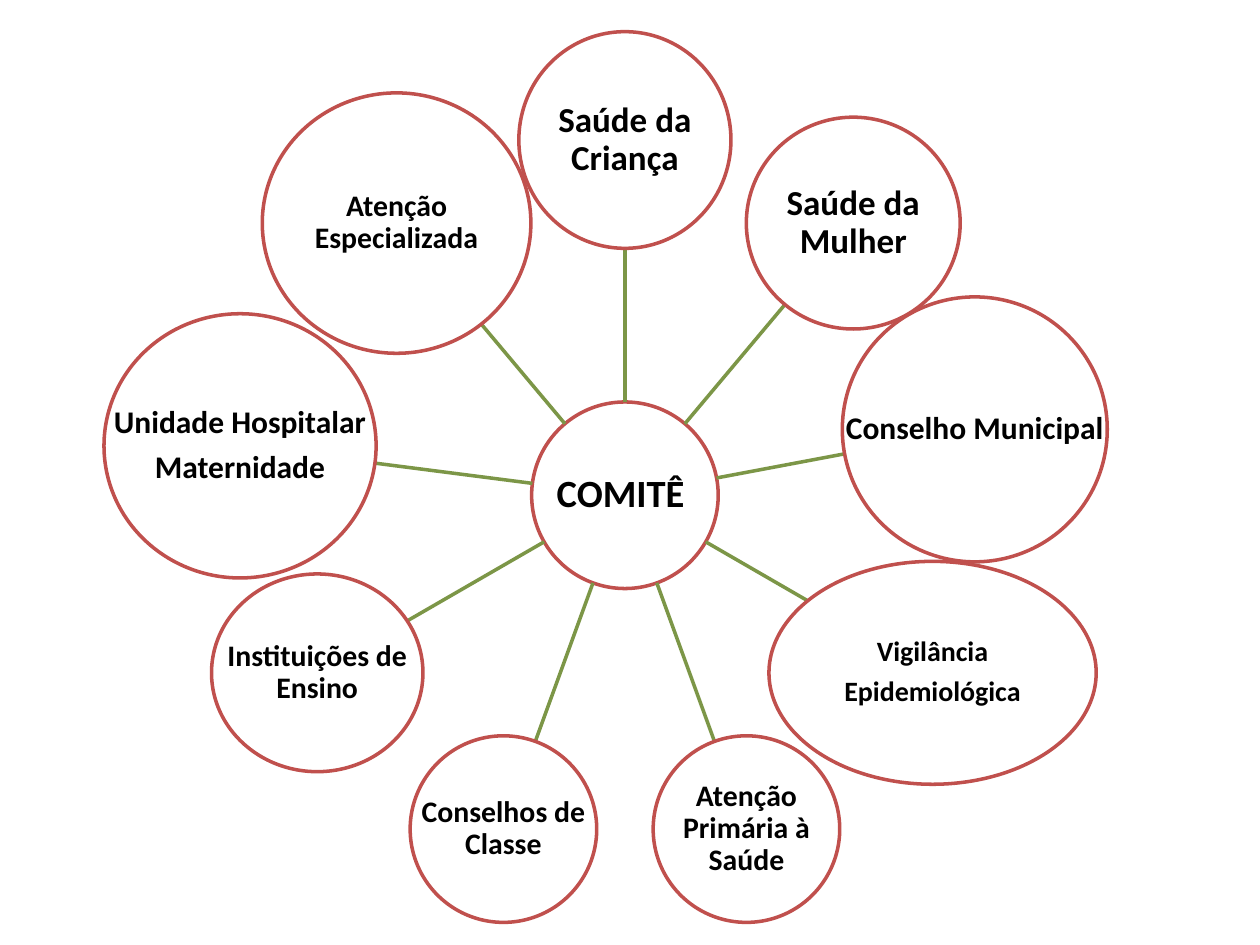
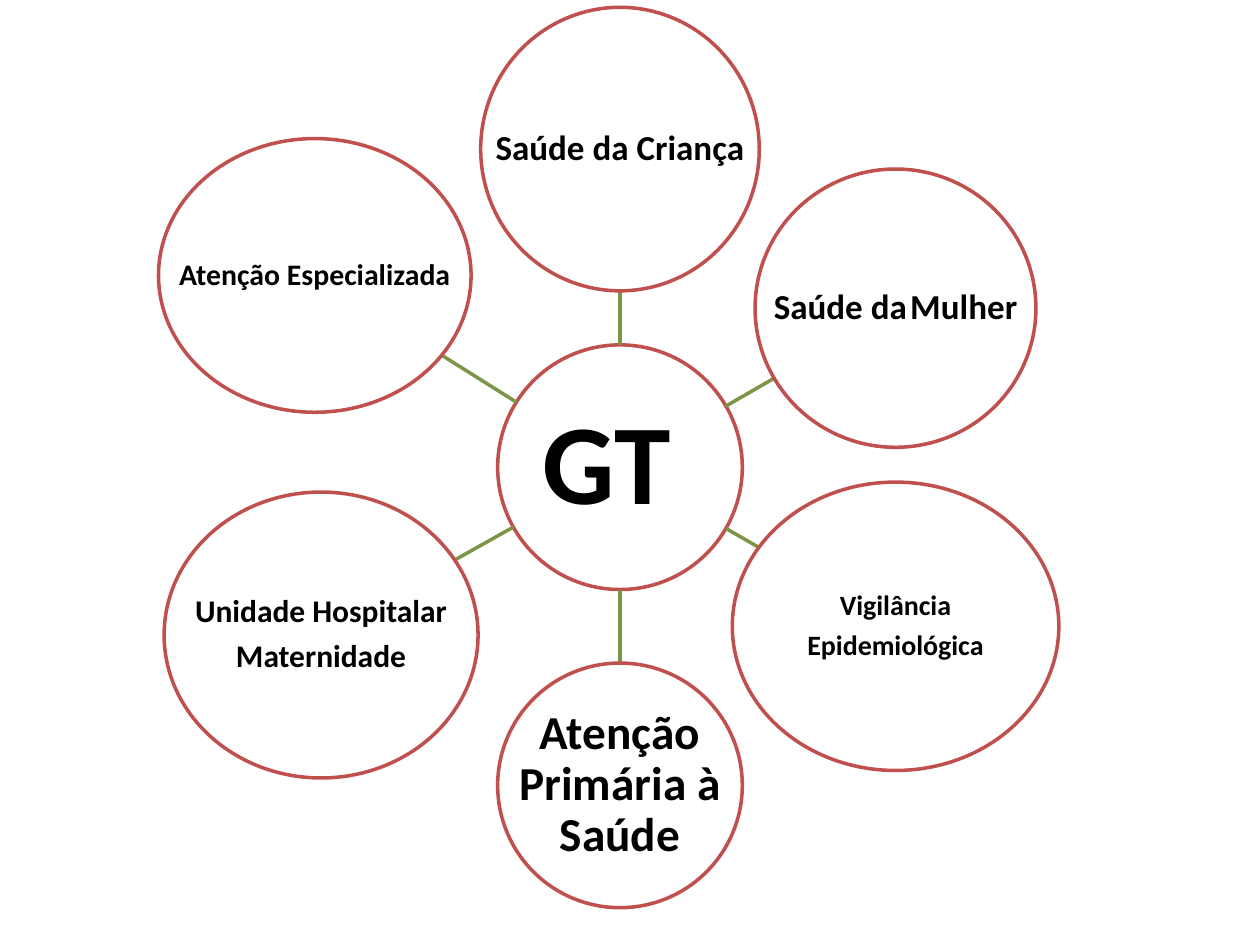
from dataclasses import dataclass
from math import cos, hypot, radians, sin

from lxml import etree
from pptx import Presentation
from pptx.dml.color import RGBColor
from pptx.enum.shapes import MSO_CONNECTOR as CONN, MSO_SHAPE as SHAPE
from pptx.enum.text import MSO_ANCHOR as ANCHOR, PP_ALIGN as ALIGN
from pptx.oxml.ns import qn
from pptx.util import Pt

FONT = "Calibri"
WHITE, BLACK, RED, GREEN = "FFFFFF", "000000", "C0504D", "7C9647"
LINE_WIDTH = 2
THIN_SPACE = 8

CHILD = [["Saúde da Criança"]]
WOMAN = [["Saúde da", " ", "Mulher"]]
COUNCIL = [["Conselho Municipal"]]
SURVEILLANCE = [["Vigilância"], ["Epidemiológica"]]
PRIMARY = [["Atenção Primária à Saúde"]]
CLASS_COUNCILS = [["Conselhos de Classe"]]
SCHOOLS = [["Instituições de Ensino"]]
HOSPITAL = [["Unidade Hospitalar"], ["Maternidade"]]
SPECIALIZED = [["Atenção Especializada"]]


@dataclass
class Node:
    label: list
    size: int
    width: float
    height: float
    dx: float = 0
    dy: float = 0


def color(value):
    return RGBColor.from_string(value)


def add_spoke(slide, hub, node, start, end):
    dx, dy = end[0] - start[0], end[1] - start[1]

    def edge(n):
        return 1 / hypot(dx / (n.width / 2), dy / (n.height / 2))

    a, b = edge(hub), 1 - edge(node)
    points = [Pt(v) for t in (a, b) for v in (start[0] + dx * t, start[1] + dy * t)]
    line = slide.shapes.add_connector(CONN.STRAIGHT, *points)
    line.line.color.rgb = color(GREEN)
    line.line.width = Pt(LINE_WIDTH)
    etree.SubElement(line._element.spPr, qn("a:effectLst"))


def add_label(slide, node, box):
    tf = slide.shapes.add_textbox(*box).text_frame
    tf.word_wrap = True
    tf.vertical_anchor = ANCHOR.MIDDLE
    tf.margin_left = tf.margin_right = tf.margin_top = tf.margin_bottom = Pt(1)
    for i, parts in enumerate(node.label):
        p = tf.add_paragraph() if i else tf.paragraphs[0]
        p.alignment = ALIGN.CENTER
        p.line_spacing = 0.9
        p.space_after = Pt(0.35 * node.size)
        for part in parts:
            r = p.add_run()
            r.text = part
            r.font.name = FONT
            r.font.bold = True
            r.font.size = Pt(THIN_SPACE if part == " " else node.size)
            r.font.color.rgb = color(BLACK)


def add_node(slide, node, center):
    x, y = center
    box = [Pt(v) for v in (x - node.width / 2, y - node.height / 2, node.width, node.height)]
    sp = slide.shapes.add_shape(SHAPE.OVAL, *box)
    sp.shadow.inherit = False
    sp.fill.solid()
    sp.fill.fore_color.rgb = color(WHITE)
    sp.line.color.rgb = color(RED)
    sp.line.width = Pt(LINE_WIDTH)
    add_label(slide, node, box)


def add_radial_slide(prs, center, radius, hub, nodes):
    slide = prs.slides.add_slide(prs.slide_layouts[6])
    add_node(slide, hub, center)
    for i, node in enumerate(nodes):
        angle = radians(360 / len(nodes) * i)
        end = (center[0] + radius * sin(angle) + node.dx,
               center[1] - radius * cos(angle) + node.dy)
        add_spoke(slide, hub, node, center, end)
        add_node(slide, node, end)


def main():
    prs = Presentation()
    prs.slide_width, prs.slide_height = Pt(720), Pt(540)

    add_radial_slide(prs, (357.1, 283), 203, Node([["COMITÊ "]], 22, 106.6, 106.6), [
        Node(CHILD, 20, 121.2, 123.8),
        Node(WOMAN, 20, 122.2, 121),
        Node(COUNCIL, 18, 151.4, 151.4, 0, -2.4),
        Node(SURVEILLANCE, 16, 187, 127.4),
        Node(PRIMARY, 17, 106.6, 106.6),
        Node(CLASS_COUNCILS, 17, 106.6, 106.6),
        Node(SCHOOLS, 17, 120.8, 113),
        Node(HOSPITAL, 18, 155.5, 151, -20, 7),
        Node(SPECIALIZED, 17, 153.5, 148.8),
    ])
    add_radial_slide(prs, (354.3, 267), 181.8, Node([["GT "]], 65, 139.8, 139.8), [
        Node(CHILD, 20, 159.2, 162),
        Node(WOMAN, 20, 160.5, 159),
        Node(SURVEILLANCE, 16, 186.6, 164.8),
        Node(PRIMARY, 27, 139.8, 139.8),
        Node(HOSPITAL, 18, 179.4, 163.4, -13.4, 5),
        Node(SPECIALIZED, 17, 178.6, 156.4, -17, -18.7),
    ])
    prs.save("out.pptx")


if __name__ == "__main__":
    main()
